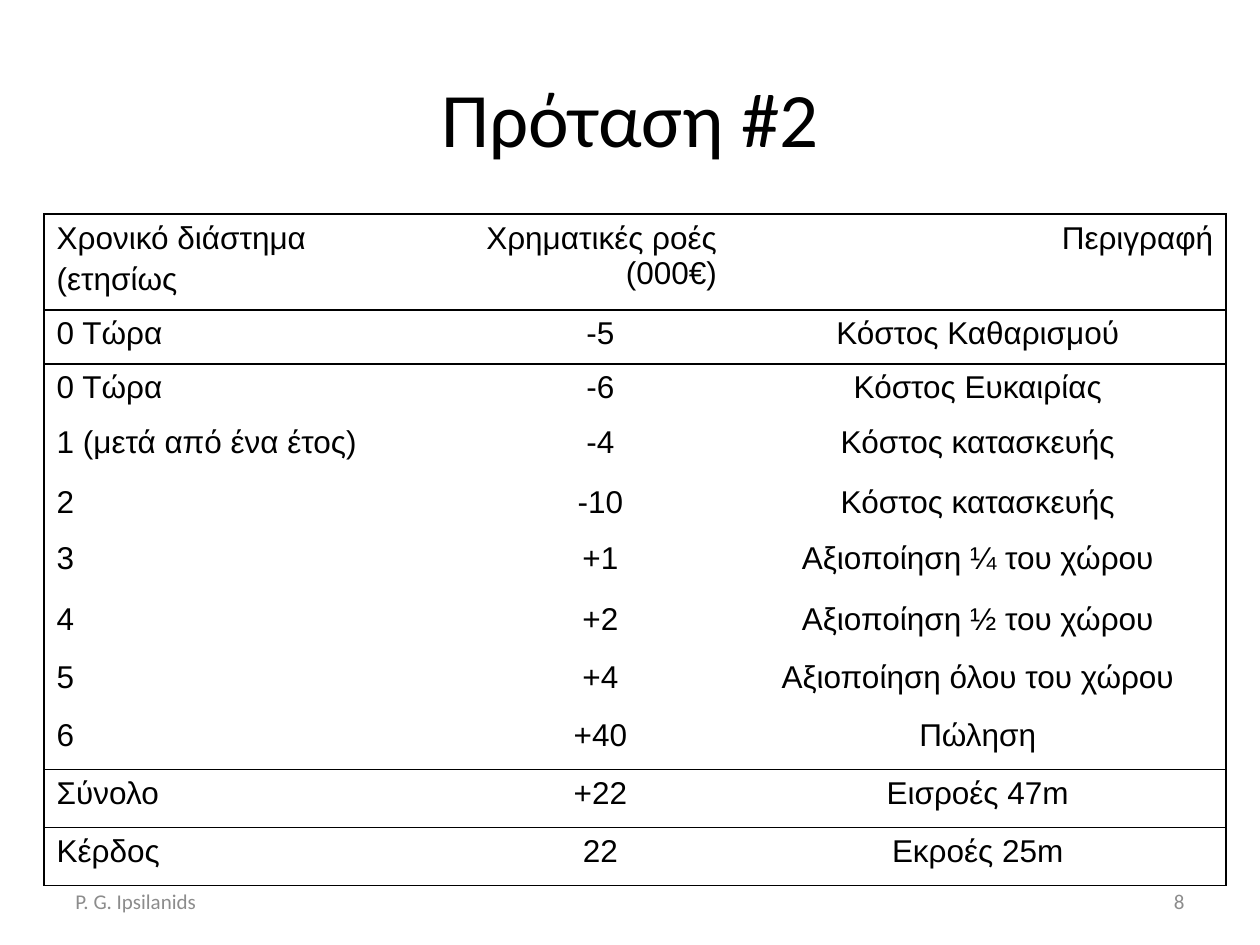
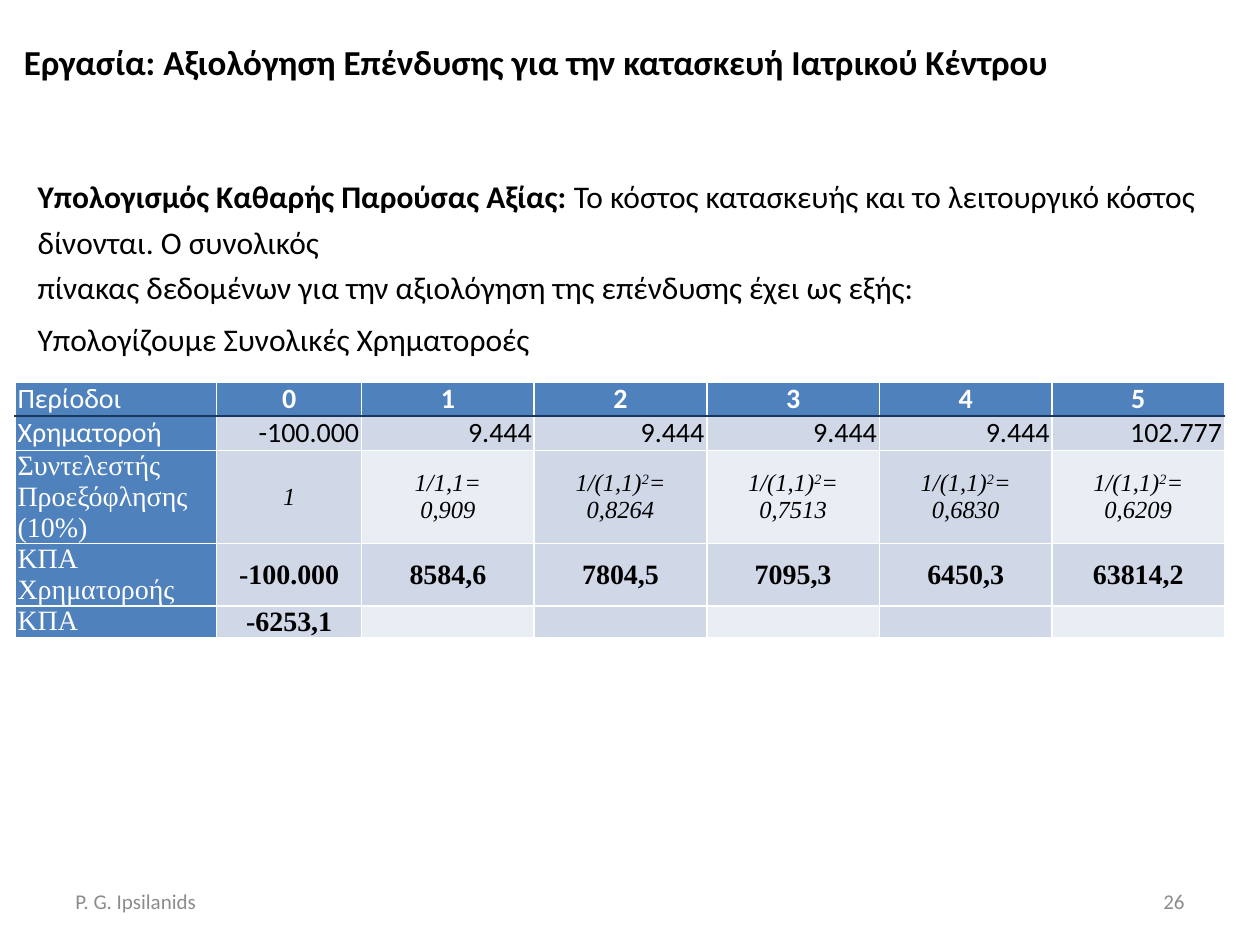
from pptx import Presentation
from pptx.dml.color import RGBColor
from pptx.enum.text import MSO_ANCHOR as Anchor, MSO_AUTO_SIZE as AutoSize, PP_ALIGN as Align
from pptx.oxml.ns import qn
from pptx.util import Inches, Pt
from lxml.etree import SubElement

# Shared grid: 100 columns by 75 rows
WIDTH, HEIGHT = Inches(10), Inches(7.5)
CELL = WIDTH // 100

BLACK, WHITE, GREY = "000000", "FFFFFF", "8C8C8C"
BLUE, NAVY, BAND, PALE = "4F81BD", "17375E", "D0D8E8", "E9EDF4"
NO_STYLE = "{2D5ABB26-0587-4C30-8999-92F81FD0307C}"
AUTHOR = "P. G. Ipsilanids"


def grid(*lengths):
    return [round(length * CELL) for length in lengths]


def rgb(value):
    return RGBColor.from_string(value)


def set_font(font, size, name="Calibri", color=BLACK, bold=False, italic=False):
    font.size, font.name = Pt(size), name
    font.bold, font.italic = bold, italic
    font.color.rgb = rgb(color)


def write(paragraph, text, align=Align.LEFT, **style):
    """Write text in one style; parts between ^ marks are raised."""
    paragraph.alignment = align
    set_font(paragraph.font, **style)
    if not text:
        SubElement(paragraph._p, qn("a:endParaRPr"), sz=str(style["size"] * 100))
        return
    for index, part in enumerate(text.split("^")):
        run = paragraph.add_run()
        run.text = part
        if index % 2:
            run.font._element.set("baseline", "30000")


def add_title(slide, text, box, size, bold=False):
    title = slide.shapes.title
    title.left, title.top, title.width, title.height = grid(*box)
    frame = title.text_frame
    frame.auto_size, frame.vertical_anchor = AutoSize.NONE, Anchor.MIDDLE
    write(frame.paragraphs[0], text, Align.CENTER, size=size, bold=bold)


def add_text_frame(slide, box, anchor=Anchor.TOP):
    frame = slide.shapes.add_textbox(*grid(*box)).text_frame
    frame.word_wrap, frame.vertical_anchor = True, anchor
    return frame


def add_footer(slide, number):
    for left, text, align in ((5, AUTHOR, Align.LEFT), (71.7, str(number), Align.RIGHT)):
        frame = add_text_frame(slide, (left, 69.5, 23.3, 4), Anchor.MIDDLE)
        write(frame.paragraphs[0], text, align, size=12, color=GREY)


def add_plain_table(slide, left, top, columns, rows):
    frame = slide.shapes.add_table(
        len(rows), len(columns), *grid(left, top, sum(columns), sum(rows)))
    table = frame.table
    table.first_row = table.horz_banding = False
    table._tbl.tblPr.find(qn("a:tableStyleId")).text = NO_STYLE
    for column, width in zip(table.columns, grid(*columns)):
        column.width = width
    for row, height in zip(table.rows, grid(*rows)):
        row.height = height
    return table


def finish_cell(cell, borders, fill=None):
    """Draw borders, given as side: colour, and then the fill."""
    properties = cell._tc.get_or_add_tcPr()
    for side in "LRTB":
        if side in borders:
            line = SubElement(properties, qn(f"a:ln{side}"), w=str(Pt(1)))
            solid = SubElement(line, qn("a:solidFill"))
            SubElement(solid, qn("a:srgbClr"), val=borders[side])
    if fill:
        cell.fill.solid()
        cell.fill.fore_color.rgb = rgb(fill)
    else:
        cell.fill.background()


# Cash flows of the proposal
CASH_FLOWS = [
    ("Χρονικό διάστημα\n(ετησίως", "Χρηματικές ροές (000€)", "Περιγραφή"),
    ("0 Τώρα", "-5", "Κόστος Καθαρισμού"),
    ("0 Τώρα", "-6", "Κόστος Ευκαιρίας"),
    ("1 (μετά από ένα έτος)", "-4", "Κόστος κατασκευής"),
    ("2", "-10", "Κόστος κατασκευής"),
    ("3", "+1", "Αξιοποίηση ¼ του χώρου"),
    ("4", "+2", "Αξιοποίηση ½ του χώρου"),
    ("5", "+4", "Αξιοποίηση όλου του χώρου"),
    ("6", "+40", "Πώληση"),
    ("Σύνολο", "+22", "Εισροές 47m"),
    ("Κέρδος", "22", "Εκροές 25m"),
]
SECTION_STARTS = {0, 1, 9}  # header, flows, totals


def add_cash_flow_table(slide, left, top):
    columns = [33.9, 20.5, 39.4]
    rows = [7.6, 4.3, 4.3, 4.8, 4.4, 4.9] + [4.6] * 5
    table = add_plain_table(slide, left, top, columns, rows)
    section_ends = {start - 1 for start in SECTION_STARTS} | {len(rows) - 1}
    for r, entries in enumerate(CASH_FLOWS):
        for c, entry in enumerate(entries):
            cell = table.cell(r, c)
            align = Align.LEFT if c == 0 else Align.CENTER if r else Align.RIGHT
            for i, line in enumerate(entry.split("\n")):
                frame = cell.text_frame
                paragraph = frame.add_paragraph() if i else frame.paragraphs[0]
                if i:
                    paragraph.space_before = Pt(3.6)
                write(paragraph, line, align, size=18, name="Arial")
            edges = {"L": c == 0, "R": c == len(columns) - 1,
                     "T": r in SECTION_STARTS, "B": r in section_ends}
            finish_cell(cell, {side: BLACK for side, drawn in edges.items() if drawn})


# Net present value: label, values, value alignment, label font, value style
SERIF = "Times New Roman"
FACTORS = ["1", "1/1,1=\n0,909"] + [
    f"1/(1,1)^2^=\n{factor}" for factor in ("0,8264", "0,7513", "0,6830", "0,6209")]
PRESENT_VALUE = [
    ("Περίοδοι", list("012345"), Align.CENTER, "Calibri",
     dict(size=16, color=WHITE, bold=True)),
    ("Χρηματοροή", ["-100.000"] + ["9.444"] * 4 + ["102.777"], Align.RIGHT, "Calibri",
     dict(size=16)),
    ("Συντελεστής Προεξόφλησης (10%)", FACTORS, Align.CENTER, SERIF,
     dict(size=14, name=SERIF, italic=True)),
    ("ΚΠΑ Χρηματοροής", ["-100.000", "8584,6", "7804,5", "7095,3", "6450,3", "63814,2"],
     Align.CENTER, SERIF, dict(size=16, name=SERIF, bold=True)),
    ("ΚΠΑ", ["-6253,1"] + [""] * 5, Align.CENTER, SERIF,
     dict(size=16, name=SERIF, bold=True)),
]
CHECKERED_ROWS = {2, 4}


def present_value_fill(r, c):
    if r == 0 or c == 0:
        return BLUE
    return PALE if r in CHECKERED_ROWS and c % 2 == 0 else BAND


def add_present_value_table(slide, left, top):
    columns = [16, 11.5] + [13.7] * 5
    table = add_plain_table(slide, left, top, columns, [2.7, 2.7, 7.4, 4.9, 2.5])
    for r, (label, values, value_align, label_font, value_style) in enumerate(PRESENT_VALUE):
        label_style = dict(size=16, name=label_font, color=WHITE)
        borders = {"L": WHITE, "R": WHITE, "T": NAVY if r == 1 else WHITE,
                   "B": NAVY if r == 0 else WHITE}
        for c, entry in enumerate([label] + values):
            cell = table.cell(r, c)
            cell.margin_left = cell.margin_right = Inches(0.02)
            cell.margin_top = cell.margin_bottom = 0
            if r and c:
                cell.vertical_anchor = Anchor.MIDDLE
            style, align = (value_style, value_align) if c else (label_style, Align.LEFT)
            for i, line in enumerate(entry.split("\n")):
                frame = cell.text_frame
                paragraph = frame.add_paragraph() if i else frame.paragraphs[0]
                write(paragraph, line, align, **style)
            finish_cell(cell, borders, present_value_fill(r, c))


def add_introduction(slide, box):
    frame = add_text_frame(slide, box)
    method, step = frame.paragraphs[0], frame.add_paragraph()
    for paragraph in (method, step):
        paragraph.line_spacing = 1.2
    step.space_before = Pt(3.6)
    write(method, "Υπολογισμός Καθαρής Παρούσας Αξίας: ", size=18)
    method.runs[0].font.bold = True
    method.add_run().text = ("Το κόστος κατασκευής και το λειτουργικό κόστος δίνονται. "
                             "Ο συνολικός")
    method.add_line_break()
    method.add_run().text = "πίνακας δεδομένων για την αξιολόγηση της επένδυσης έχει ως εξής:"
    write(step, "Υπολογίζουμε Συνολικές Χρηματοροές", size=18)


def build_proposal(slide):
    add_title(slide, "Πρόταση #2", (5, 3, 90, 12.5), 44)
    add_footer(slide, 8)
    add_cash_flow_table(slide, 3.5, 17)


def build_assignment(slide):
    add_title(slide, "Εργασία: Αξιολόγηση Επένδυσης για την κατασκευή Ιατρικού Κέντρου",
              (0.4, 3, 84.3, 3.8), 20, bold=True)
    add_present_value_table(slide, 1.2, 30.3)
    add_footer(slide, 26)
    add_introduction(slide, (2, 13, 95.3, 15))


def main():
    deck = Presentation()
    deck.slide_width, deck.slide_height = WIDTH, HEIGHT
    title_only = deck.slide_layouts[5]
    for build in (build_proposal, build_assignment):
        build(deck.slides.add_slide(title_only))
    deck.save("out.pptx")


if __name__ == "__main__":
    main()
